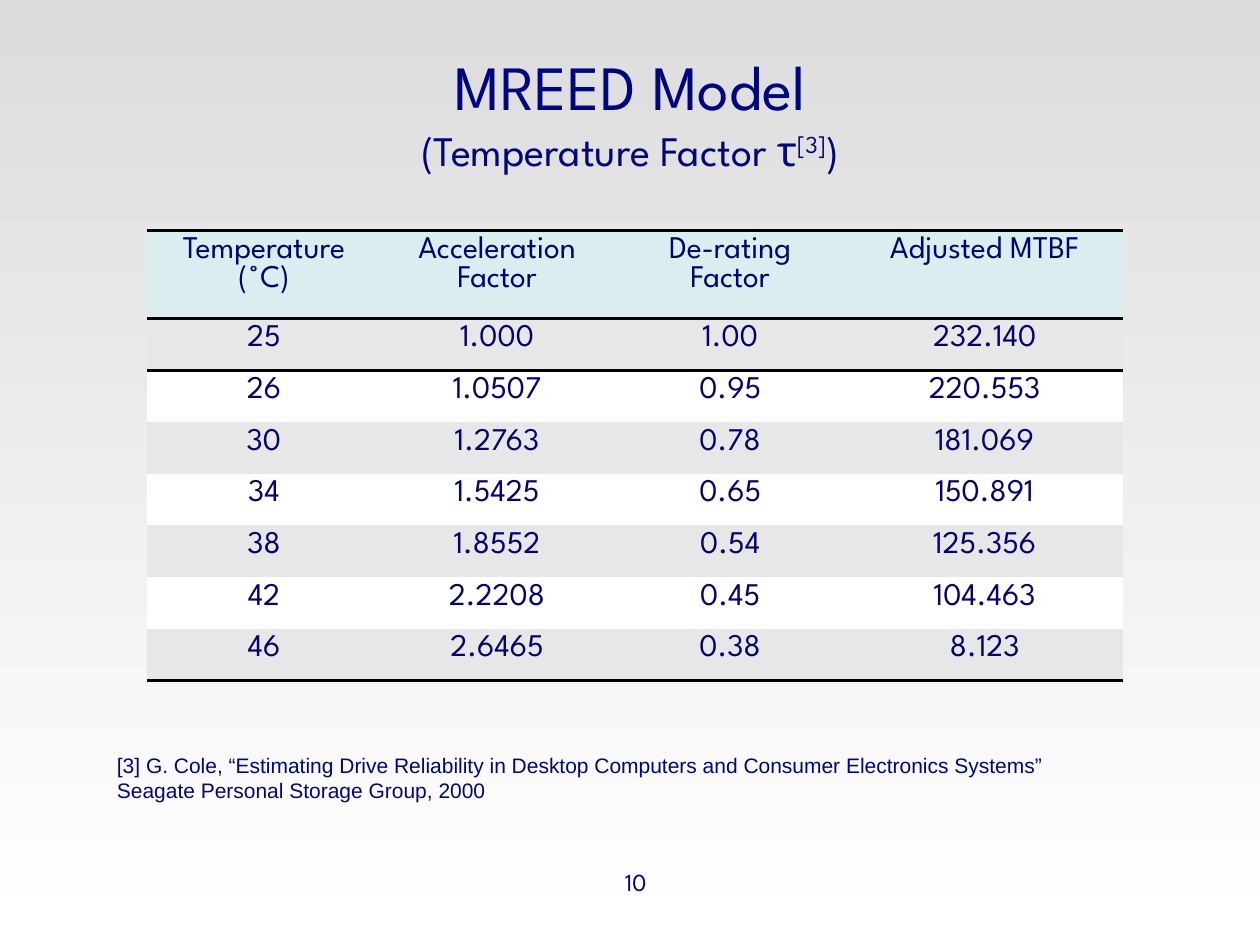
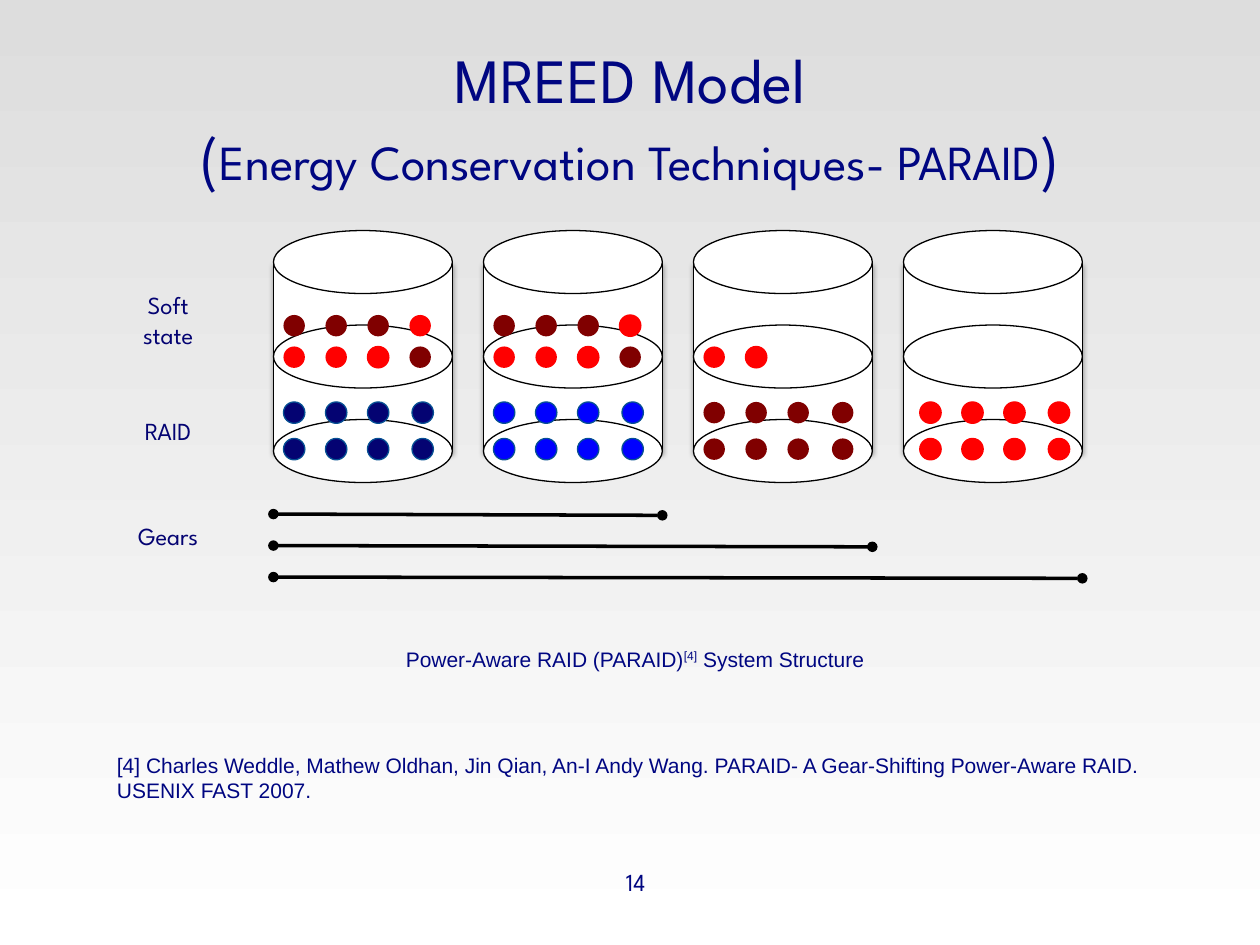
"""Build two slides on the MREED reliability model: temperature factors and PARAID."""
from lxml import etree
from pptx import Presentation
from pptx.dml.color import RGBColor
from pptx.enum.shapes import MSO_CONNECTOR, MSO_SHAPE
from pptx.enum.text import MSO_ANCHOR, MSO_AUTO_SIZE, PP_ALIGN
from pptx.oxml import parse_xml
from pptx.oxml.ns import nsdecls, qn
from pptx.util import Inches, Pt

BLACK = RGBColor(0x00, 0x00, 0x00)
WHITE = RGBColor(0xFF, 0xFF, 0xFF)
BG_TOP = RGBColor(0xDD, 0xDD, 0xDD)
NAVY = RGBColor(0x00, 0x06, 0x81)
INK = RGBColor(0x04, 0x03, 0x72)
EDGE = RGBColor(0x06, 0x50, 0x93)
BLUE = RGBColor(0x00, 0x00, 0xFF)
MAROON = RGBColor(0x80, 0x00, 0x00)
RED = RGBColor(0xFF, 0x00, 0x00)
HEADER = RGBColor(0xDA, 0xED, 0xEF)
BAND = RGBColor(0xE7, 0xE7, 0xE7)
HEADING_FONT = "League Spartan"
TEXT_FONT = "Arial"
NO_TABLE_STYLE = "{2D5ABB26-0587-4C30-8999-92F81FD0307C}"

FACTORS = [
    ("Temperature\n(˚C)", "Acceleration Factor", "De-rating Factor", "Adjusted MTBF"),
    ("25", "1.000", "1.00", "232.140"),
    ("26", "1.0507", "0.95", "220.553"),
    ("30", "1.2763", "0.78", "181.069"),
    ("34", "1.5425", "0.65", "150.891"),
    ("38", "1.8552", "0.54", "125.356"),
    ("42", "2.2208", "0.45", "104.463"),
    ("46", "2.6465", "0.38", "8.123"),
]

DOT_STYLES = {
    "n": (INK, EDGE),
    "b": (BLUE, EDGE),
    "m": (MAROON, None),
    "r": (RED, None),
    "R": (RED, RED),
}
DOT_ROWS = (2.5, 2.75, 3.19, 3.48)
DISKS = [
    ("mmmr", "rrRm", "nnnn", "nnnn"),
    ("mmmR", "rrRm", "bbbb", "bbbb"),
    ("", "rR", "mmmm", "mmmm"),
    ("", "", "RRRR", "RRRR"),
]
DISK_LEFT, DISK_STEP, DISK_WIDTH = 2.17, 5 / 3, 1.42
DOT_SIZE, DOT_STEP = 0.17, 1 / 3


class Deck:
    """Hold the shared style and the current slide."""

    def __init__(self):
        self.prs = Presentation()
        self.prs.slide_width, self.prs.slide_height = Inches(10), Inches(7.5)
        fill = self.prs.slide_master.background.fill
        fill.gradient()
        fill.gradient_angle = 270
        for stop, position, color in zip(fill.gradient_stops, (0, 1), (BG_TOP, WHITE)):
            stop.position = position
            stop.color.rgb = color

    def new_slide(self, top, paragraphs, spacings, number, citation):
        """Add a slide with its title, page number and citation."""
        self.s = self.prs.slides.add_slide(self.prs.slide_layouts[5])
        sp = self.s.shapes.title
        sp.left, sp.top, sp.width, sp.height = map(Inches, (0.5, top, 9, 1.25))
        tf = sp.text_frame
        tf.auto_size = MSO_AUTO_SIZE.NONE
        tf.vertical_anchor = MSO_ANCHOR.MIDDLE
        self.fill_text(tf, paragraphs, 36)
        for p, spacing in zip(tf.paragraphs, spacings):
            p.line_spacing = Pt(spacing)
        self.text((4.67, 6.83, 0.75, 0.52), [number], 14, spacing=17)
        self.text((0.83, 5.92, 8.33, 0.51), citation, 12, font=TEXT_FONT,
                  align=PP_ALIGN.LEFT)

    def fill_text(self, tf, paragraphs, size, color=NAVY, font=HEADING_FONT,
                  align=PP_ALIGN.CENTER, spacing=None):
        """Fill a text frame; a paragraph is a string or (text, size, raised) runs."""
        for i, runs in enumerate(paragraphs):
            p = tf.add_paragraph() if i else tf.paragraphs[0]
            p.alignment = align
            if spacing:
                p.line_spacing = Pt(spacing)
            p.font.name, p.font.size = font, Pt(size)
            p.font.color.rgb = color
            if isinstance(runs, str):
                runs = [(runs, None, False)]
            for text, run_size, raised in runs:
                r = p.add_run()
                r.text = text
                if run_size:
                    r.font.size = Pt(run_size)
                if raised:
                    r._r.get_or_add_rPr().set("baseline", "30000")

    def text(self, box, paragraphs, size, **style):
        """Add a wrapped text box."""
        tf = self.s.shapes.add_textbox(*map(Inches, box)).text_frame
        tf.word_wrap = True
        self.fill_text(tf, paragraphs, size, **style)

    def shape(self, kind, box, fill, line=None, shadow=False):
        """Add a filled preset shape."""
        sp = self.s.shapes.add_shape(kind, *map(Inches, box))
        sp.shadow.inherit = False
        sp.fill.solid()
        sp.fill.fore_color.rgb = fill
        if line is None:
            sp.line.fill.background()
        else:
            sp.line.color.rgb = line
            sp.line.width = Pt(0.75)
        if shadow:
            sp.element.spPr.find(qn("a:effectLst")).append(parse_xml(
                f'<a:outerShdw {nsdecls("a")} blurRad="{Pt(3.1)}" dist="{Pt(1.8)}" '
                'dir="5400000" rotWithShape="0"><a:srgbClr val="000000">'
                '<a:alpha val="35000"/></a:srgbClr></a:outerShdw>'))

    def gear(self, right, y):
        """Add a line with oval ends running back to the first disk."""
        cx = self.s.shapes.add_connector(
            MSO_CONNECTOR.STRAIGHT, *map(Inches, (right, y + 0.01, DISK_LEFT, y)))
        cx.line.color.rgb = BLACK
        cx.line.width = Pt(2)
        ln = cx.element.spPr.find(qn("a:ln"))
        for end in ("a:headEnd", "a:tailEnd"):
            etree.SubElement(ln, qn(end)).set("type", "oval")
        etree.SubElement(cx.element.spPr, qn("a:effectLst"))

    def disk(self, left, rows, raid_shift):
        """Add a two-layer disk with its rows of data blocks."""
        self.shape(MSO_SHAPE.RECTANGLE, (left, 2.08, DISK_WIDTH, 1.5), WHITE, BLACK, True)
        for y in (1.83, 2.58, 3.33):
            self.shape(MSO_SHAPE.OVAL, (left, y, DISK_WIDTH, 0.5), WHITE, BLACK)
        for y, codes in zip(DOT_ROWS, rows):
            in_raid = y > 3
            for j, code in enumerate(codes):
                x = left + 0.08 + j * DOT_STEP
                if in_raid:
                    x += raid_shift + (0.02 if j == 3 else 0)
                self.shape(MSO_SHAPE.OVAL, (x, y, DOT_SIZE, DOT_SIZE), *DOT_STYLES[code])

    def table(self, box, widths, heights, rows):
        """Add a banded table ruled above and below its header and at its foot."""
        frame = self.s.shapes.add_table(len(rows), len(widths), *map(Inches, box))
        next(frame.element.iter(qn("a:tableStyleId"))).text = NO_TABLE_STYLE
        table = frame.table
        for column, width in zip(table.columns, widths):
            column.width = Inches(width)
        for i, values in enumerate(rows):
            table.rows[i].height = Inches(heights[i])
            edges = {0: ("T", "B"), 1: ("T",), len(rows) - 1: ("B",)}.get(i, ())
            for j, value in enumerate(values):
                cell = table.cell(i, j)
                self.fill_text(cell.text_frame, value.split("\n"), 18, INK, spacing=16.5)
                cell.fill.solid()
                cell.fill.fore_color.rgb = HEADER if i == 0 else BAND if i % 2 else WHITE
                for k, edge in enumerate(edges):
                    cell._tc.get_or_add_tcPr().insert(k, parse_xml(
                        f'<a:ln{edge} {nsdecls("a")} w="{Pt(2)}"><a:solidFill>'
                        f'<a:srgbClr val="{BLACK}"/></a:solidFill></a:ln{edge}>'))


def temperature_slide(deck):
    """Show the temperature factors."""
    deck.new_slide(
        0.25,
        ["MREED Model", [("(Temperature Factor τ", 24, False), ("[3]", 24, True),
                         (")", 24, False)]],
        (44, 29.5), "10",
        ["[3] G. Cole, “Estimating Drive Reliability in Desktop Computers and "
         "Consumer Electronics Systems”", "Seagate Personal Storage Group, 2000"])
    deck.table((1.17, 1.83, 7.75, 3.54), (1.85, 1.85, 1.85, 2.19),
               [0.7] + [0.41] * 7, FACTORS)


def paraid_slide(deck):
    """Show the PARAID disks and gears."""
    deck.new_slide(
        0.3,
        ["MREED Model", [("(", None, False),
                         ("Energy Conservation Techniques- PARAID", 28, False),
                         (")", None, False)]],
        (44, 44), "14",
        ["[4] Charles Weddle, Mathew Oldhan, Jin Qian, An-I Andy Wang. "
         "PARAID- A Gear-Shifting Power-Aware RAID.", "USENIX FAST 2007."])
    deck.text((2.83, 5.08, 4.42, 0.3),
              [[("Power-Aware RAID (PARAID)", None, False), ("[4]", None, True),
                (" System Structure", None, False)]], 12, font=TEXT_FONT)
    for i, rows in enumerate(DISKS):
        deck.disk(DISK_LEFT + i * DISK_STEP, rows, 0.05 if i == 3 else 0)
    for y, height, lines in ((2.25, 0.57, ["Soft", "state"]), (3.25, 0.34, ["RAID"]),
                             (4.08, 0.34, ["Gears"])):
        deck.text((0.92, y, 0.83, height), lines, 14, color=INK, spacing=17)
    for i in range(3):
        deck.gear(DISK_LEFT + (i + 1) * DISK_STEP + DISK_WIDTH, 4.08 + 0.25 * i)


def main():
    """Build and save the slides."""
    deck = Deck()
    temperature_slide(deck)
    paraid_slide(deck)
    deck.prs.save("out.pptx")


if __name__ == "__main__":
    main()
